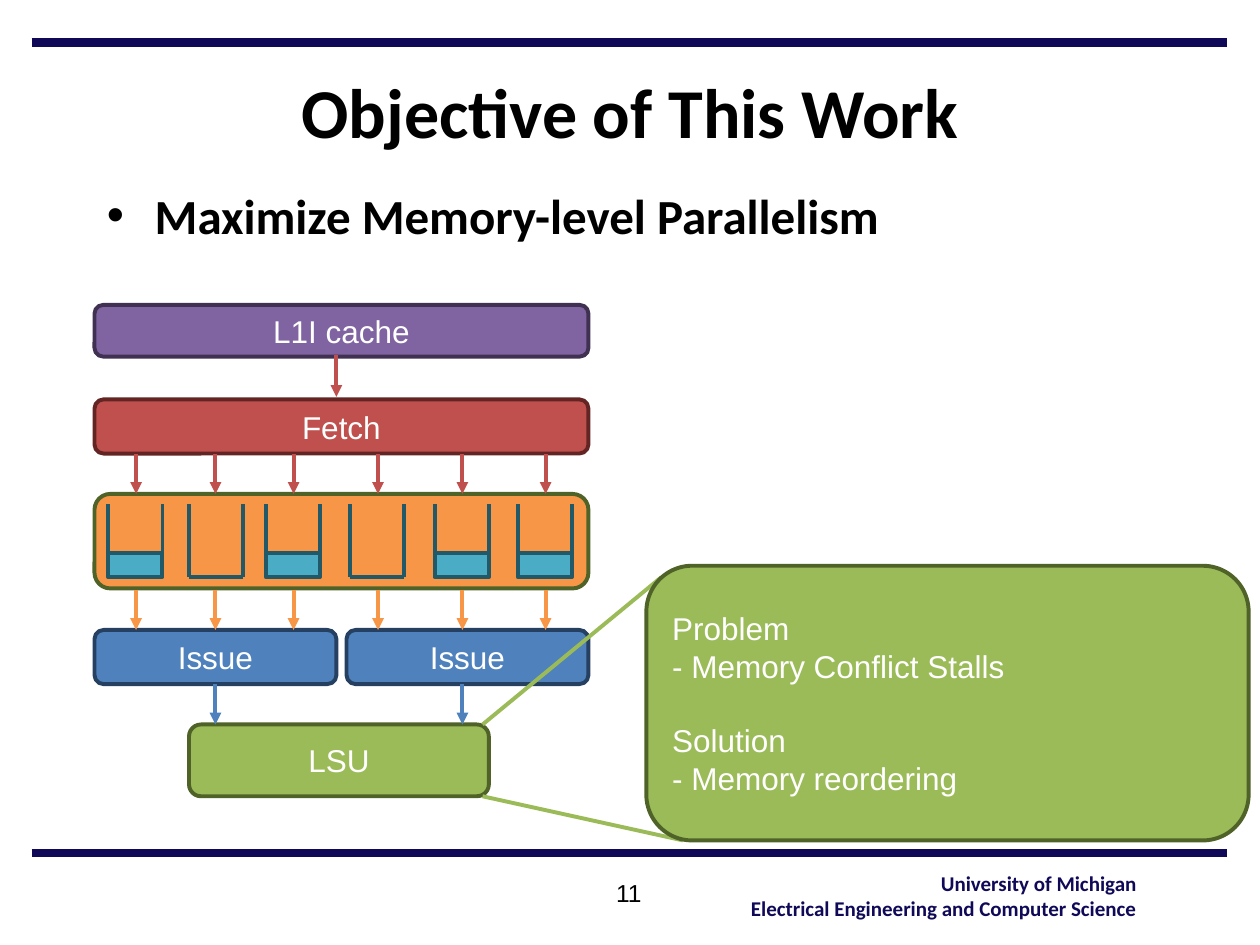
from lxml import etree
from pptx import Presentation
from pptx.dml.color import RGBColor
from pptx.enum import shapes, text
from pptx.oxml.ns import qn
from pptx.util import Inches, Pt

THEME = {
    "navy": "0F0958", "black": "000000", "white": "FFFFFF",
    "red": "C0504D", "red_edge": "632523",
    "blue": "4F81BD", "blue_edge": "254061",
    "green": "9BBB59", "green_edge": "4F6228",
    "purple": "8064A2", "purple_edge": "403152",
    "teal": "4BACC6", "teal_edge": "215968",
    "orange": "F79646",
    "heading": "Calibri", "body": "Arial",
    "title_pt": 40, "bullet_pt": 28, "label_pt": 18,
    "page_pt": 14, "footer_pt": 12, "line_pt": 2.25, "rule_pt": 5,
}

TITLE = ["Objective of This Work"]
BULLET = ["Maximize Memory-level Parallelism"]
PAGE = ["11"]
FOOTER = ["University of Michigan", "Electrical Engineering and Computer Science"]
CALLOUT = ["Problem", "- Memory Conflict Stalls", "Solution", "- Memory reordering"]

LEFT, WIDTH = 0.75, 3.92
STAGES = [
    (["L1I cache"], (LEFT, 2.42, WIDTH, 0.41), "purple", "purple_edge"),
    (["Fetch"], (LEFT, 3.17, WIDTH, 0.43), "red", "red_edge"),
    ([], (LEFT, 3.92, WIDTH, 0.75), "orange", "green_edge"),
    (["Issue"], (LEFT, 5, 1.92, 0.43), "blue", "blue_edge"),
    (["Issue"], (2.75, 5, 1.92, 0.43), "blue", "blue_edge"),
    (["LSU"], (1.5, 5.75, 2.38, 0.57), "green", "green_edge"),
]
LANES = [1.08, 1.71, 2.33, 3, 3.67, 4.33]
ARROWS = [
    ([2.67], 2.82, 3.15, "red"),
    (LANES, 3.6, 3.92, "red"),
    (LANES, 4.68, 5, "orange"),
    ([1.71, 3.67], 5.43, 5.75, "blue"),
]
QUEUES = [(0.86, True), (1.5, False), (2.11, True),
          (2.78, False), (3.45, True), (4.11, True)]
QUEUE_W, QUEUE_TOP, QUEUE_BOTTOM, FILL_H = 0.43, 4, 4.58, 0.19
ZOOM_LINES = [((3.83, 5.75), (5.25, 4.58)), ((3.83, 6.32), (5.42, 6.67))]
CALLOUT_BOX = (5.13, 4.49, 4.78, 2.18)

ALIGN = text.PP_ALIGN
MIDDLE = text.MSO_ANCHOR.MIDDLE


def color(name):
    return RGBColor.from_string(THEME[name])


def write(sp, lines, size, ink, font="body", align=ALIGN.CENTER,
          anchor=text.MSO_ANCHOR.TOP, bold=False, wrap=True):
    tf = sp.text_frame
    tf.word_wrap = wrap
    tf.vertical_anchor = anchor
    tf.text = "\n".join(lines)
    for p in tf.paragraphs:
        p.alignment = align
        for r in p.runs:
            r.font.name = THEME[font]
            r.font.size = Pt(THEME[size])
            r.font.bold = bold
            r.font.color.rgb = color(ink)
    return tf


def add_text(s, box, lines, size, ink, **style):
    sp = s.shapes.add_textbox(*map(Inches, box))
    return write(sp, lines, size, ink, **style)


def add_box(s, box, fill, edge, lines=(), rounded=True, align=ALIGN.CENTER):
    kind = shapes.MSO_SHAPE.ROUNDED_RECTANGLE if rounded else shapes.MSO_SHAPE.RECTANGLE
    sp = s.shapes.add_shape(kind, *map(Inches, box))
    sp.shadow.inherit = False
    sp.fill.solid()
    sp.fill.fore_color.rgb = color(fill)
    sp.line.color.rgb = color(edge)
    sp.line.width = Pt(THEME["line_pt"])
    if lines:
        return write(sp, lines, "label_pt", "white", align=align,
                     anchor=MIDDLE, wrap=False)


def add_line(s, start, end, ink, weight="line_pt", arrow=False):
    line = s.shapes.add_connector(shapes.MSO_CONNECTOR.STRAIGHT,
                                  *map(Inches, (*start, *end)))
    line.line.color.rgb = color(ink)
    line.line.width = Pt(THEME[weight])
    if arrow:
        etree.SubElement(line.line._get_or_add_ln(), qn("a:tailEnd"), type="triangle")
    etree.SubElement(line._element.spPr, qn("a:effectLst"))


def add_queue(s, left, filled):
    right = left + QUEUE_W
    if filled:
        add_box(s, (left, QUEUE_BOTTOM - FILL_H, QUEUE_W, FILL_H),
                "teal", "teal_edge", rounded=False)
    else:
        add_line(s, (left, QUEUE_BOTTOM), (right, QUEUE_BOTTOM), "teal_edge")
    for x in (left, right):
        add_line(s, (x, QUEUE_TOP), (x, QUEUE_BOTTOM), "teal_edge")


def add_bullet(p):
    pPr = p._p.get_or_add_pPr()
    pPr.set("marL", str(Inches(0.38)))
    pPr.set("indent", str(-Inches(0.38)))
    etree.SubElement(pPr, qn("a:buFont"), typeface=THEME["body"])
    etree.SubElement(pPr, qn("a:buChar"), char="•")


def main():
    prs = Presentation()
    prs.slide_width, prs.slide_height = Inches(10), Inches(7.5)
    s = prs.slides.add_slide(prs.slide_layouts[6])

    for y in (0.34, 6.77):
        add_line(s, (0.25, y), (9.74, y), "navy", "rule_pt")
    add_text(s, (5.82, 6.86, 3.3, 0.5), FOOTER, "footer_pt", "navy",
             font="heading", align=ALIGN.RIGHT, bold=True, wrap=False)
    add_text(s, (0.75, 0.42, 8.5, 0.91), TITLE, "title_pt", "black",
             font="heading", anchor=MIDDLE, bold=True)
    tf = add_text(s, (0.75, 1.42, 8.5, 0.65), BULLET, "bullet_pt", "black",
                  font="heading", align=ALIGN.LEFT, bold=True)
    add_bullet(tf.paragraphs[0])
    add_text(s, (3.95, 6.92, 2.08, 0.5), PAGE, "page_pt", "black")

    for lines, box, fill, edge in STAGES:
        add_box(s, box, fill, edge, lines)
    for xs, top, bottom, ink in ARROWS:
        for x in xs:
            add_line(s, (x, top), (x, bottom), ink, arrow=True)
    for left, filled in QUEUES:
        add_queue(s, left, filled)
    for start, end in ZOOM_LINES:
        add_line(s, start, end, "green")

    tf = add_box(s, CALLOUT_BOX, "green", "green_edge", CALLOUT, align=ALIGN.LEFT)
    tf.paragraphs[CALLOUT.index("Solution")].space_before = Pt(21)

    prs.save("out.pptx")


if __name__ == "__main__":
    main()
